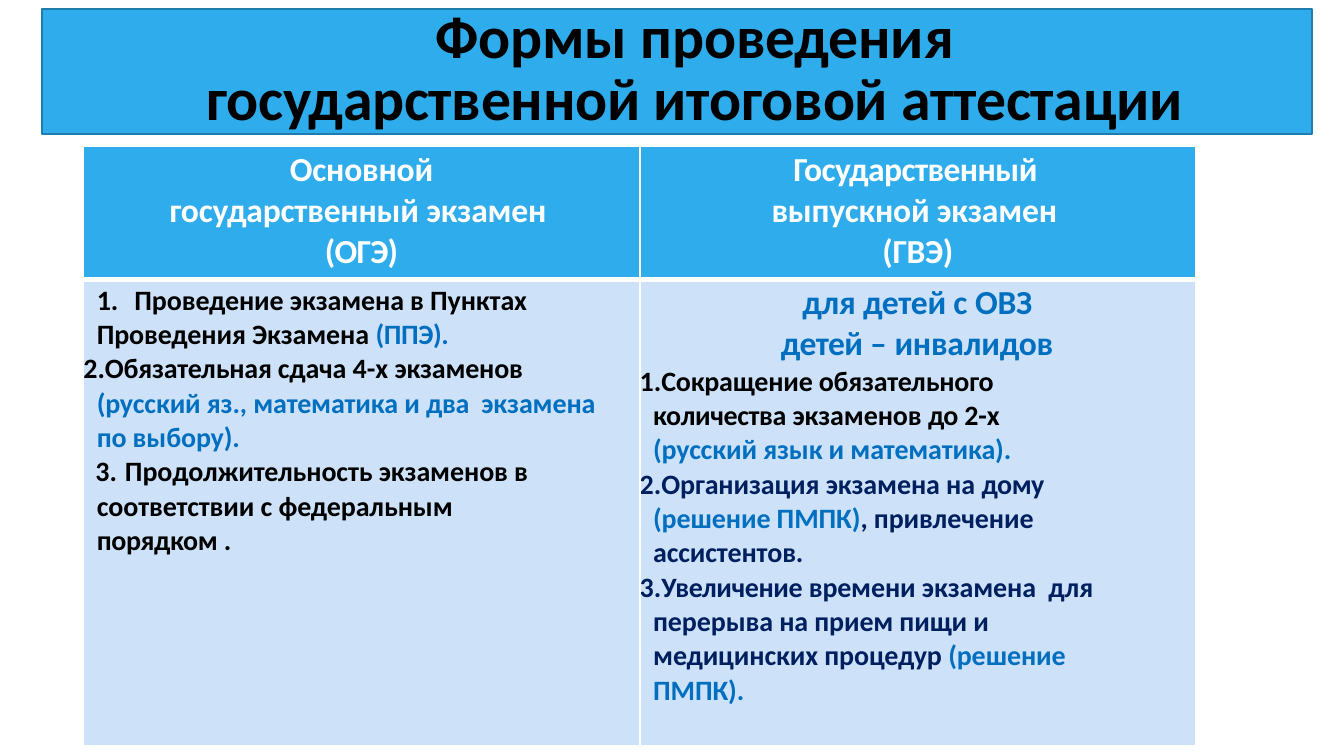
from dataclasses import dataclass

from lxml.etree import SubElement
from pptx import Presentation
from pptx.dml.color import RGBColor
from pptx.enum.shapes import MSO_SHAPE as Shape
from pptx.enum.text import MSO_ANCHOR as Anchor, PP_ALIGN as Align
from pptx.oxml.ns import qn
from pptx.util import Inches, Pt


@dataclass(frozen=True)
class Theme:
    font: str = "Calibri"
    accent: str = "2FACEB"
    outline: str = "1F7CAC"
    panel: str = "CDE2F8"
    white: str = "FFFFFF"
    black: str = "000000"
    blue: str = "006FC0"
    navy: str = "001F5F"
    title: int = 32
    heading: int = 18
    body: int = 15


THEME = Theme()
BLACK, BLUE, NAVY = THEME.black, THEME.blue, THEME.navy
HEADINGS = (
    [
        dict(runs=[("Основной", -0.1)], before=2.2),
        dict(runs=[("государственный экзамен  ", -0.1), ("(ОГЭ)", -0.4)],
             left=0.46, right=0.46),
    ],
    [
        dict(runs=[("Государственный  ", -0.3), ("выпускной экзамен  ", -0.1),
                   ("(ГВЭ)", -0.2)], left=0.95, indent=0.01, right=0.95, before=2.2),
    ],
)
HANGING = dict(left=0.1, indent=-0.1, before=0.1, number=1, tab=0.37)
MAIN_EXAM = [
    dict(runs=[("Проведение экзамена в Пунктах", -0.05)],
         left=0.38, indent=-0.28, before=2.4, number=1, tab=0.38),
    dict(runs=[("Проведения Экзамена ", -0.05), ("(ППЭ).", -0.2, BLUE)], left=0.1),
    dict(HANGING, number=2, before=0, right=0.2, runs=[
        ("Обязательная сдача ", -0.1), ("4-х ", 0), ("экзаменов  ", -0.1),
        ("(русский яз., математика и ", -0.05, BLUE), ("два  ", -0.2, BLUE),
        ("экзамена по выбору).", -0.05, BLUE)]),
    dict(runs=[("Продолжительность экзаменов в", -0.05)],
         left=0.31, indent=-0.22, before=0.1, number=2, tab=0.32),
    dict(runs=[("соответствии с федеральным  ", -0.05), ("порядком ", -0.2),
               (".", -0.05)], left=0.1, right=0.7),
]
STATE_EXAM = [
    dict(runs=[("для", -0.1), (" детей ", -0.2), ("с ", 0), ("ОВЗ", -0.1)],
         left=1.21, before=2.2, size=THEME.heading, color=BLUE),
    dict(runs=[("детей ", -0.3), ("– ", 0), ("инвалидов", -0.1)],
         left=1.05, before=0.1, size=THEME.heading, color=BLUE),
    dict(HANGING, right=1, runs=[
        ("Сокращение обязательного  ", -0.1), ("количества ", -0.2),
        ("экзаменов ", -0.05), ("до ", -0.3), ("2-х  ", -0.05),
        ("(русский язык и математика).", -0.05, BLUE)]),
    dict(HANGING, right=0.9, color=NAVY, runs=[
        ("Организация экзамена на ", -0.05), ("дому  ", -0.2),
        ("(решение ПМПК)", -0.05, BLUE), (", привлечение  ассистентов.", -0.05)]),
    dict(HANGING, right=0.6, color=NAVY, tab=0.42, runs=[
        ("Увеличение ", -0.2),
        ("времени экзамена  для перерыва на прием пищи и  медицинских процедур ", -0.05),
        ("(решение  ПМПК).", -0.05, BLUE)]),
]


def rgb(value):
    return RGBColor.from_string(value)


def write_text(paragraph, runs, size=THEME.body, color=BLACK, align=Align.LEFT,
               left=0, right=0, indent=0, before=0, line=None, number=None, tab=None):
    properties = paragraph._p.get_or_add_pPr()
    for name, value in (("marL", left), ("marR", right), ("indent", indent)):
        properties.set(name, str(Inches(value)))
    if number:
        SubElement(properties, qn("a:buFont"), typeface=THEME.font)
        SubElement(properties, qn("a:buAutoNum"), type="arabicPeriod", startAt=str(number))
    if tab:
        tabs = SubElement(properties, qn("a:tabLst"))
        SubElement(tabs, qn("a:tab"), pos=str(Inches(tab)), algn="l")
    paragraph.alignment = align
    paragraph.space_before = Pt(before)
    if line:
        paragraph.line_spacing = Pt(line)
    for text, spacing, *own_color in runs:
        run = paragraph.add_run()
        run.text = text
        font = run.font
        font.name, font.size, font.bold = THEME.font, Pt(size), True
        font.color.rgb = rgb(own_color[0] if own_color else color)
        font._element.set("spc", str(round(spacing * 100)))


def fill_frame(frame, items, **shared):
    for index, item in enumerate(items):
        paragraph = frame.add_paragraph() if index else frame.paragraphs[0]
        write_text(paragraph, **{**shared, **item})


def style_cell(cell, color, top, bottom, inset):
    cell.margin_left = cell.margin_right = cell.margin_bottom = 0
    cell.margin_top = Inches(inset)
    cell.vertical_anchor = Anchor.TOP
    properties = cell._tc.get_or_add_tcPr()
    for side, width in (("L", 1), ("R", 1), ("T", top), ("B", bottom)):
        border = SubElement(properties, qn(f"a:ln{side}"), w=str(Pt(width)))
        solid = SubElement(border, qn("a:solidFill"))
        SubElement(solid, qn("a:srgbClr"), val=THEME.white)
    cell.fill.solid()
    cell.fill.fore_color.rgb = rgb(color)


def add_title(slide, left, top, width, height):
    banner = slide.shapes.add_shape(
        Shape.RECTANGLE, Inches(left), Inches(top), Inches(width), Inches(height))
    banner.shadow.inherit = False
    banner.fill.solid()
    banner.fill.fore_color.rgb = rgb(THEME.accent)
    banner.line.color.rgb = rgb(THEME.outline)
    banner.line.width = Pt(1.2)
    frame = banner.text_frame
    frame.word_wrap = True
    frame.vertical_anchor = Anchor.TOP
    frame.margin_left = frame.margin_top = frame.margin_right = frame.margin_bottom = 0
    lines = [
        dict(runs=[("Формы проведения", -0.1)]),
        dict(runs=[("государственной ", -0.2), ("итоговой аттестации", -0.1)]),
    ]
    fill_frame(frame, lines, size=THEME.title, align=Align.CENTER, left=0.27, line=33)


def add_exam_table(slide, left, top, width, height, heading_height):
    table = slide.shapes.add_table(
        2, 2, Inches(left), Inches(top), Inches(width), Inches(height)).table
    table.rows[0].height = Inches(heading_height)
    table.rows[1].height = Inches(height - heading_height)
    for column, (heading, body) in enumerate(zip(HEADINGS, (MAIN_EXAM, STATE_EXAM))):
        table.columns[column].width = Inches(width / 2)
        heading_cell, body_cell = table.cell(0, column), table.cell(1, column)
        style_cell(heading_cell, THEME.accent, top=1, bottom=3, inset=0.02)
        style_cell(body_cell, THEME.panel, top=3, bottom=1, inset=0.03 - 0.01 * column)
        fill_frame(heading_cell.text_frame, heading, size=THEME.heading,
                   color=THEME.white, align=Align.CENTER)
        fill_frame(body_cell.text_frame, body)


def main():
    presentation = Presentation()
    presentation.slide_width = Inches(10)
    presentation.slide_height = presentation.slide_width * 9 // 16
    slide = presentation.slides.add_slide(presentation.slide_layouts[6])
    add_title(slide, 0.31, 0.07, 9.45, 0.93)
    add_exam_table(slide, 0.62, 1.09, 8.28, 4.46, heading_height=0.99)
    presentation.save("out.pptx")


if __name__ == "__main__":
    main()
